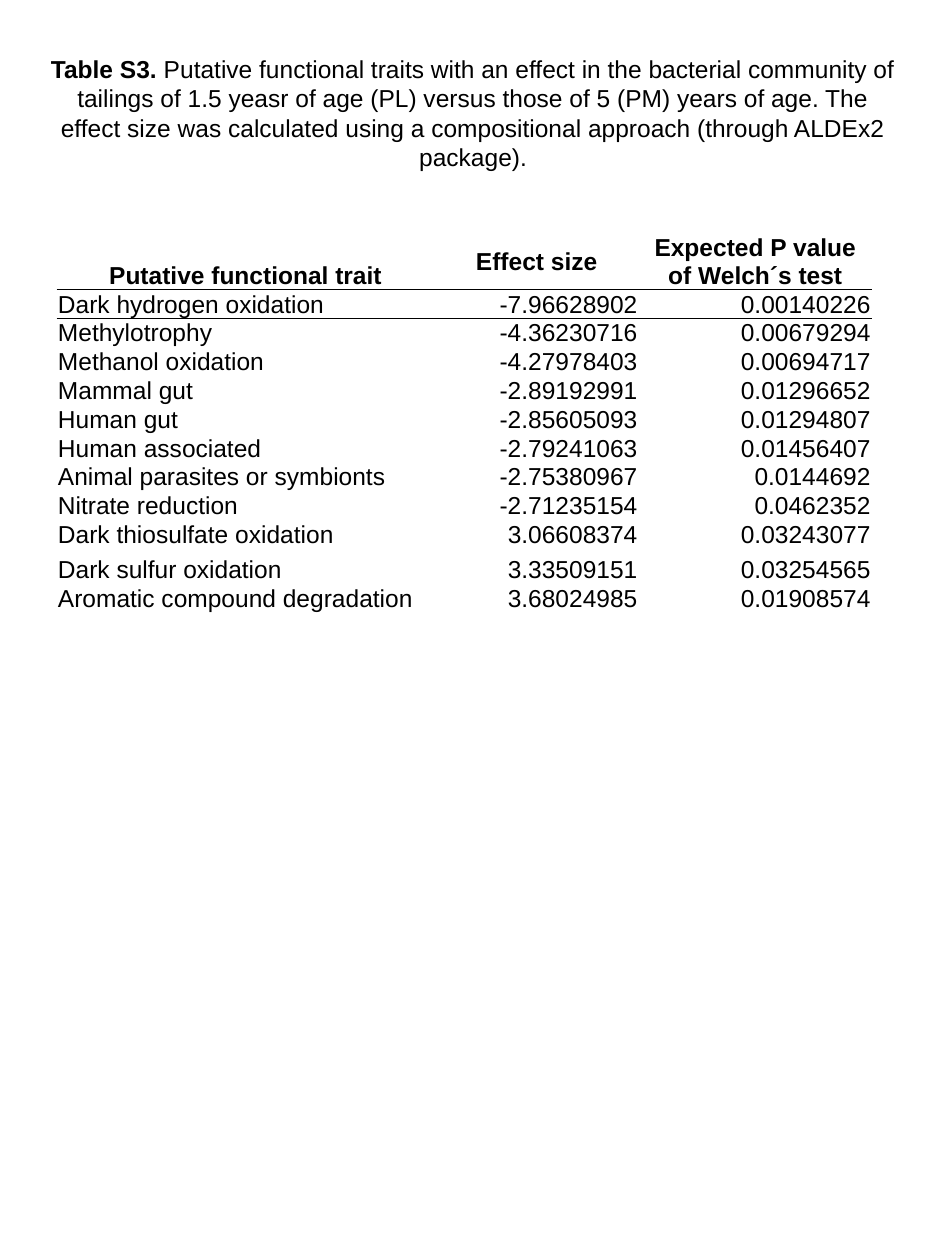
from pptx import Presentation
from pptx.dml.color import RGBColor
from pptx.enum.text import MSO_ANCHOR, PP_ALIGN
from pptx.oxml import parse_xml
from pptx.oxml.ns import nsdecls, qn
from pptx.util import Inches, Pt

BLACK = "000000"
NO_STYLE = "{2D5ABB26-0587-4C30-8999-92F81FD0307C}"


def set_font(paragraph, color):
    paragraph.font.name = "Arial"
    paragraph.font.size = Pt(14)
    paragraph.font.color.rgb = RGBColor.from_string(color)


def add_border(cell, side, color):
    line = parse_xml(
        f'<a:{side} {nsdecls("a")} w="{Pt(0.5)}"><a:solidFill>'
        f'<a:srgbClr val="{color}"/></a:solidFill></a:{side}>')
    cell._tc.get_or_add_tcPr().insert(0, line)


prs = Presentation()
prs.slide_width, prs.slide_height = Inches(7.5), Inches(10)
slide = prs.slides.add_slide(prs.slide_layouts[6])

# Table of functional traits
rows = [
    ("Putative functional trait", "Effect size", "Expected P value of Welch´s test"),
    ("Dark hydrogen oxidation", "-7.96628902", "0.00140226"),
    ("Methylotrophy", "-4.36230716", "0.00679294"),
    ("Methanol oxidation", "-4.27978403", "0.00694717"),
    ("Mammal gut", "-2.89192991", "0.01296652"),
    ("Human gut", "-2.85605093", "0.01294807"),
    ("Human associated", "-2.79241063", "0.01456407"),
    ("Animal parasites or symbionts", "-2.75380967", "0.0144692"),
    ("Nitrate reduction", "-2.71235154", "0.0462352"),
    ("Dark thiosulfate oxidation", "3.06608374", "0.03243077"),
    ("Dark sulfur oxidation", "3.33509151", "0.03254565"),
    ("Aromatic compound degradation", "3.68024985", "0.01908574"),
]
traits = slide.shapes.add_table(
    len(rows), 3, Inches(0.45), Inches(1.85), Inches(6.47), Inches(2.6)).table
traits.horz_banding = False
traits._tbl.tblPr.find(qn("a:tableStyleId")).text = NO_STYLE
for column, width in zip(traits.columns, (3, 1.62, 1.85)):
    column.width = Inches(width)

for r, values in enumerate(rows):
    is_header = r == 0
    # The sulfur row is taller than the others
    traits.rows[r].height = Inches(0.28 if r == 10 else 0.21)
    for c, value in enumerate(values):
        cell = traits.cell(r, c)
        cell.fill.background()
        cell.margin_left = cell.margin_right = cell.margin_top = Inches(0.01)
        cell.margin_bottom = 0
        cell.vertical_anchor = MSO_ANCHOR.MIDDLE if is_header and c else MSO_ANCHOR.BOTTOM
        cell.text = value
        paragraph = cell.text_frame.paragraphs[0]
        set_font(paragraph, BLACK)
        paragraph.font.bold = is_header
        if is_header:
            paragraph.alignment = PP_ALIGN.CENTER
        else:
            paragraph.alignment = PP_ALIGN.RIGHT if c else PP_ALIGN.LEFT
        # Rule between header and body
        if r < 2:
            add_border(cell, "lnB" if is_header else "lnT", BLACK)

# Caption
caption = slide.shapes.add_textbox(
    Inches(0.29), Inches(0.38), Inches(6.93), Inches(1.04)).text_frame
caption.word_wrap = True
legend = caption.paragraphs[0]
legend.alignment = PP_ALIGN.CENTER
set_font(legend, BLACK)
label = legend.add_run()
label.text = "Table S3."
label.font.bold = True
legend.add_run().text = (
    " Putative functional traits with an effect in the bacterial community of "
    "tailings of 1.5 yeasr of age (PL) versus those of 5 (PM) years of age. "
    "The effect size was calculated using a compositional approach "
    "(through ALDEx2 package).")

prs.save("out.pptx")
